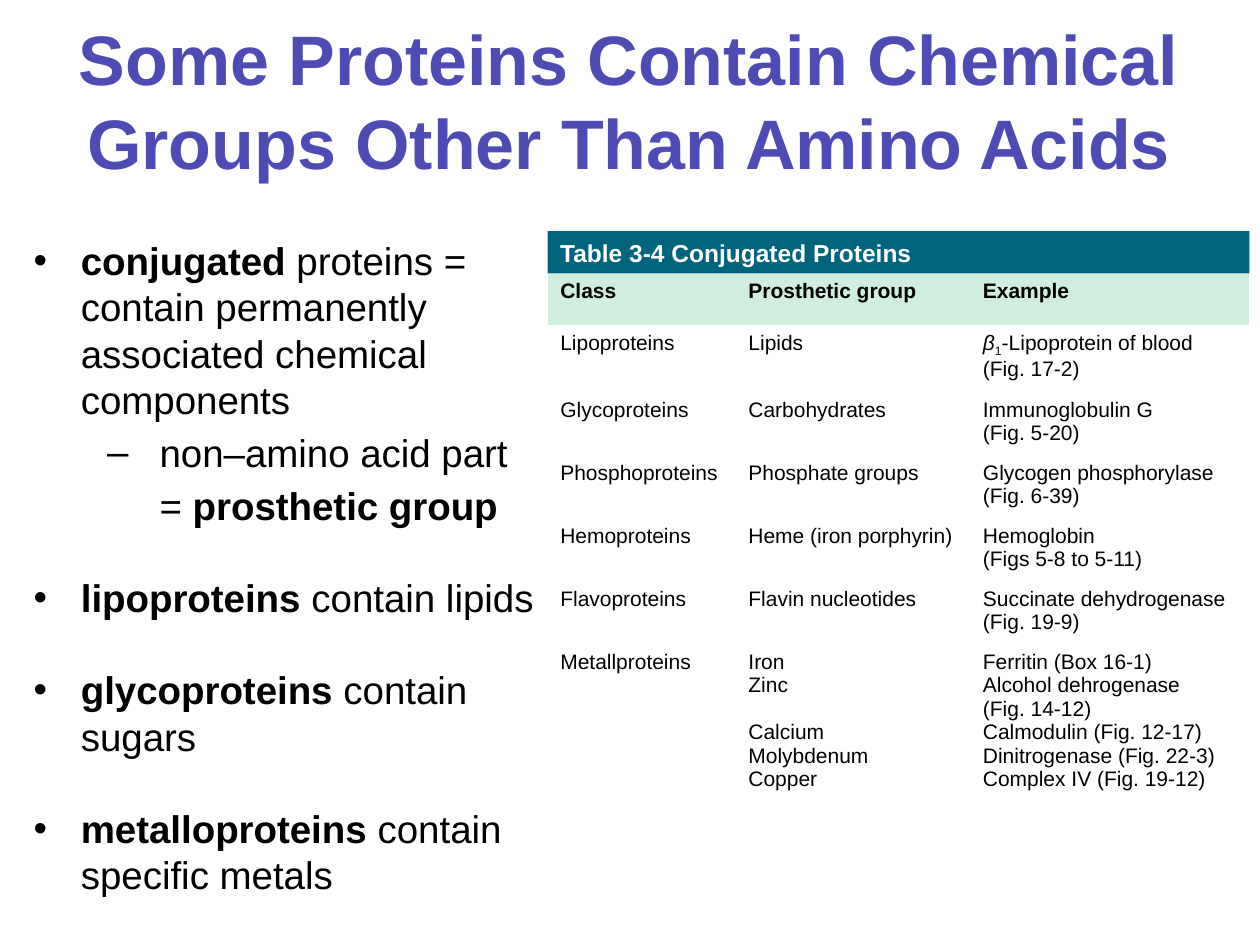
from dataclasses import dataclass

from lxml import etree
from pptx import Presentation
from pptx.dml.color import RGBColor
from pptx.enum import shapes, text
from pptx.oxml import ns
from pptx.util import Pt


@dataclass(frozen=True)
class Theme:
    face: str = "Arial"
    title: str = "4E4CB4"
    ink: str = "000000"
    paper: str = "FFFFFF"
    band: str = "00657C"
    head: str = "D0EEDD"
    title_size: float = 40
    body_size: float = 22
    band_size: float = 14
    cell_size: float = 12


THEME = Theme()
PLAIN_GRID = "{2D5ABB26-0587-4C30-8999-92F81FD0307C}"

# Each item: level, space before, runs of (wording, format)
BOLD = {"bold": True}
GAP = 26.3
POINTS = [
    (0, 0, [("conjugated ", BOLD),
            ("proteins = contain permanently associated chemical components", {})]),
    (1, 0, [("non–amino acid part = ", {}), ("prosthetic group", BOLD)]),
    (0, GAP, [("lipoproteins", BOLD), (" contain lipids", {})]),
    (0, GAP, [("glycoproteins", BOLD), (" contain sugars", {})]),
    (0, GAP, [("metalloproteins", BOLD), (" contain specific metals", {})]),
]
# Each level: left margin, hanging indent, line spacing, bullet
LEVELS = [(27, -27, 1.0, "•"), (72, -30, 1.15, "–")]

COLS = [107.5, 134, 159.5]
ROWS = [29.2, 38.3, 36, 36, 36, 36, 91.5]
BETA = [("β", {"italic": True}), ("1", {"base": -25000}),
        ("-Lipoprotein of blood\n(Fig. 17-2)", {})]
CLASSES = [
    ("Class", "Prosthetic group", "Example"),
    ("Lipoproteins", "Lipids", BETA),
    ("Glycoproteins", "Carbohydrates", "Immunoglobulin G\n(Fig. 5-20)"),
    ("Phosphoproteins", "Phosphate groups", "Glycogen phosphorylase\n(Fig. 6-39)"),
    ("Hemoproteins", "Heme (iron porphyrin)", "Hemoglobin\n(Figs 5-8 to 5-11)"),
    ("Flavoproteins", "Flavin nucleotides", "Succinate dehydrogenase\n(Fig. 19-9)"),
    ("Metallproteins", ("Iron\nZinc", "Calcium\nMolybdenum\nCopper"),
     "Ferritin (Box 16-1)\nAlcohol dehrogenase\n(Fig. 14-12)\n"
     "Calmodulin (Fig. 12-17)\nDinitrogenase (Fig. 22-3)\nComplex IV (Fig. 19-12)"),
]
CELL_GAP = 13.4


def apply(item, **values):
    for name, value in values.items():
        setattr(item, name, value)


def place(shape, box):
    apply(shape, **dict(zip(("left", "top", "width", "height"), map(Pt, box))))


def paint(fill, color):
    fill.solid()
    fill.fore_color.rgb = RGBColor.from_string(color)


def write(para, words, size, color, bold=False, base=None, **marks):
    """Add one run per line, with line breaks of the same size between."""
    for num, line in enumerate(words.split("\n")):
        if num:
            para.add_line_break()
            etree.SubElement(para._p[-1], ns.qn("a:rPr"), sz=str(int(size * 100)))
        run = para.add_run()
        run.text = line
        apply(run.font, name=THEME.face, size=Pt(size), bold=bold, **marks)
        run.font.color.rgb = RGBColor.from_string(color)
        if base:
            run.font._element.set("baseline", str(base))


def bullet(para, left, hang, mark):
    props = para._p.get_or_add_pPr()
    props.set("marL", str(Pt(left)))
    props.set("indent", str(Pt(hang)))
    color = etree.SubElement(props, ns.qn("a:buClr"))
    etree.SubElement(color, ns.qn("a:srgbClr"), val=THEME.ink)
    etree.SubElement(props, ns.qn("a:buFont"), typeface=THEME.face)
    etree.SubElement(props, ns.qn("a:buChar"), char=mark)


def add_title(slide, box):
    shape = slide.shapes.title
    place(shape, box)
    frame = shape.text_frame
    apply(frame, word_wrap=True, auto_size=text.MSO_AUTO_SIZE.NONE,
          vertical_anchor=text.MSO_ANCHOR.MIDDLE)
    para = frame.paragraphs[0]
    para.alignment = text.PP_ALIGN.CENTER
    write(para, "Some Proteins Contain Chemical Groups Other Than Amino Acids",
          THEME.title_size, THEME.title, True)


def add_points(slide, box):
    shape = slide.placeholders[1]
    place(shape, box)
    frame = shape.text_frame
    apply(frame, word_wrap=True, auto_size=text.MSO_AUTO_SIZE.NONE,
          vertical_anchor=text.MSO_ANCHOR.TOP)
    for num, (level, gap, runs) in enumerate(POINTS):
        para = frame.add_paragraph() if num else frame.paragraphs[0]
        left, hang, lines, mark = LEVELS[level]
        apply(para, level=level, space_before=Pt(gap), space_after=Pt(0),
              line_spacing=lines)
        bullet(para, left, hang, mark)
        for words, marks in runs:
            write(para, words, THEME.body_size, THEME.ink, **marks)


def add_band(slide, box):
    shape = slide.shapes.add_shape(shapes.MSO_SHAPE.RECTANGLE, *map(Pt, box))
    shape.shadow.inherit = False
    paint(shape.fill, THEME.band)
    shape.line.fill.background()
    frame = shape.text_frame
    apply(frame, word_wrap=True, vertical_anchor=text.MSO_ANCHOR.MIDDLE)
    para = frame.paragraphs[0]
    para.alignment = text.PP_ALIGN.LEFT
    write(para, "Table 3-4 Conjugated Proteins", THEME.band_size, THEME.paper, True)


def fill_cell(cell, content, head):
    paint(cell.fill, THEME.head if head else THEME.paper)
    frame = cell.text_frame
    if isinstance(content, list):
        for words, marks in content:
            write(frame.paragraphs[0], words, THEME.cell_size, THEME.ink, **marks)
        return
    parts = content if isinstance(content, tuple) else (content,)
    for num, words in enumerate(parts):
        para = frame.add_paragraph() if num else frame.paragraphs[0]
        if num:
            para.space_before = Pt(CELL_GAP)
        write(para, words, THEME.cell_size, THEME.ink, head)


def add_grid(slide, box):
    frame = slide.shapes.add_table(len(ROWS), len(COLS), *map(Pt, box))
    table = frame.table
    apply(table, first_row=False, horz_banding=False)
    table._tbl.tblPr.find(ns.qn("a:tableStyleId")).text = PLAIN_GRID
    for col, width in zip(table.columns, COLS):
        col.width = Pt(width)
    for num, (row, height) in enumerate(zip(table.rows, ROWS)):
        row.height = Pt(height)
        for cell, content in zip(row.cells, CLASSES[num]):
            fill_cell(cell, content, num == 0)


def add_panel(slide, box):
    """Place the table under its heading band."""
    left, top, width, height = box
    band = 24.3
    add_band(slide, (left, top, width, band))
    add_grid(slide, (left, top + band, width, height - band))


def main():
    deck = Presentation()
    apply(deck, slide_width=Pt(720), slide_height=Pt(540))
    slide = deck.slides.add_slide(deck.slide_layouts[1])
    add_title(slide, (-1.5, 12, 721.5, 90))
    add_points(slide, (12, 132, 301, 360))
    add_panel(slide, (313, 132, sum(COLS), 24.3 + sum(ROWS)))
    deck.save("out.pptx")


if __name__ == "__main__":
    main()
